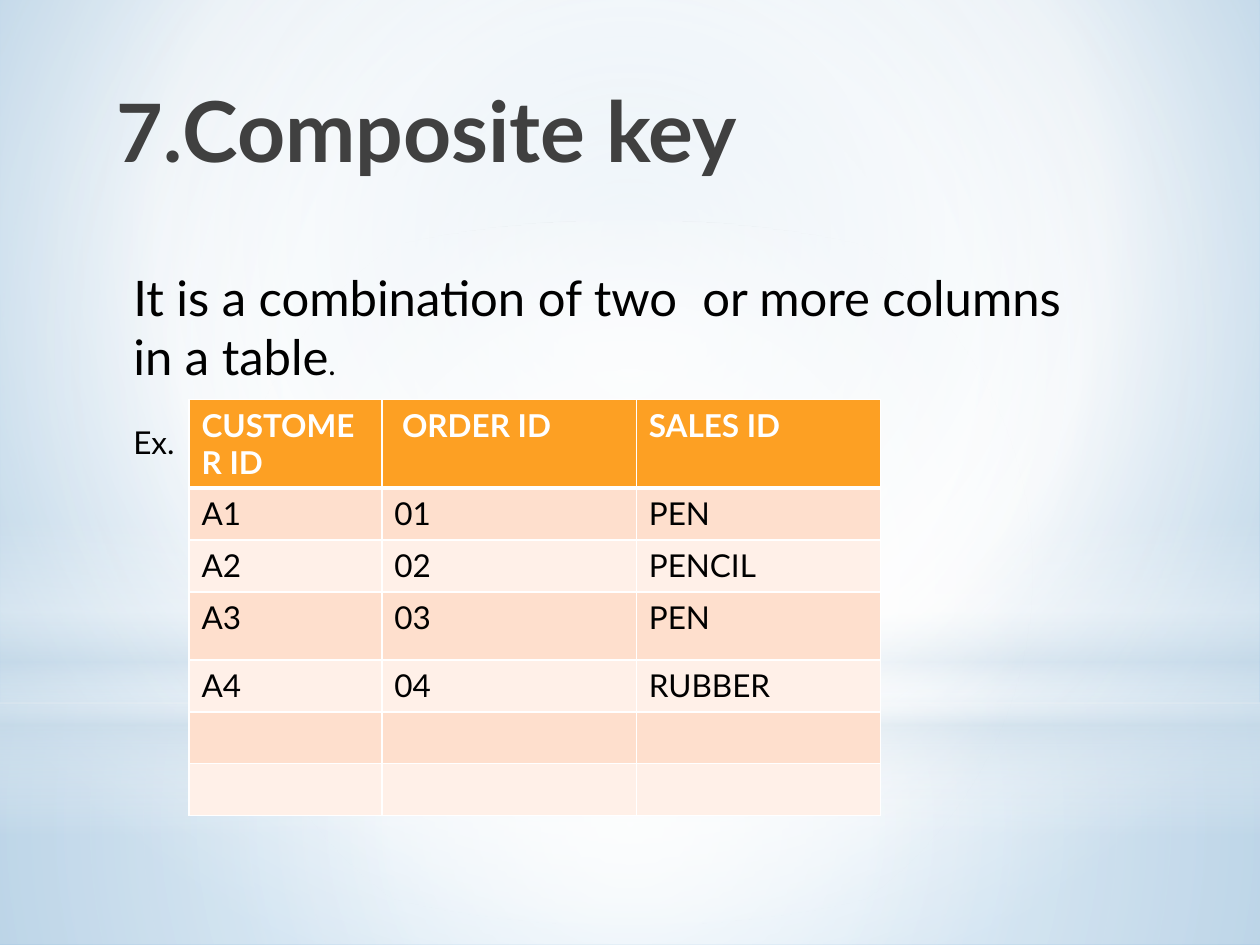
from lxml import etree
from pptx import Presentation
from pptx.dml.color import RGBColor
from pptx.enum.shapes import MSO_SHAPE
from pptx.enum.text import MSO_ANCHOR
from pptx.oxml import parse_xml
from pptx.oxml.ns import nsdecls
from pptx.util import Inches, Pt

RECTANGLE, OVAL = MSO_SHAPE.RECTANGLE, MSO_SHAPE.OVAL
TOP = MSO_ANCHOR.TOP
WIDTH, HEIGHT = Inches(10), Inches(7.5)
FONT = "Lato"
COLORS = {
    "white": "FFFFFF", "black": "000000", "title": "404040",
    "mist": "CCDDEA", "sky": "BCD5E8", "blue": "82B6DE",
    "header": "FDA023", "odd": "FEDFCD", "even": "FFF0E8",
}
CENTER = (50, 50, 50, 50)


def add_text(paragraph, text, size=18, color="black", bold=False):
    run = paragraph.add_run()
    run.text = text
    run.font.name = FONT
    run.font.size = Pt(size)
    run.font.bold = bold
    run.font.color.rgb = RGBColor.from_string(COLORS[color])


def set_gradient(fill, parent, stops, focus=None):
    """Stops are (position, color, opacity) in percent; no focus means top to bottom."""
    fill.gradient()
    stop_list = "".join(
        f'<a:gs pos="{position * 1000}"><a:srgbClr val="{COLORS[color]}">'
        f'<a:alpha val="{opacity * 1000}"/></a:srgbClr></a:gs>'
        for position, color, opacity in stops)
    if focus:
        sides = " ".join(f'{side}="{share * 1000}"' for side, share in zip("ltrb", focus))
        direction = f'<a:path path="circle"><a:fillToRect {sides}/></a:path>'
    else:
        direction = '<a:lin ang="5400000" scaled="0"/>'
    gradient = parse_xml(f'<a:gradFill {nsdecls("a")} rotWithShape="1">'
                         f'<a:gsLst>{stop_list}</a:gsLst>{direction}</a:gradFill>')
    parent.replace(parent.xpath("./a:gradFill")[0], gradient)


def set_borders(cell, top=1, bottom=1):
    properties = cell._tc.get_or_add_tcPr()
    for index, (side, width) in enumerate(zip("LRTB", (1, 1, top, bottom))):
        line = parse_xml(
            f'<a:ln{side} {nsdecls("a")} w="{Pt(width)}"><a:solidFill>'
            f'<a:srgbClr val="{COLORS["white"]}"/></a:solidFill></a:ln{side}>')
        properties.insert(index, line)


class SlideBuilder:
    """Places elements on a grid of 100 columns by 100 rows."""

    def __init__(self, slide):
        self.slide = slide

    def box(self, left, top, width, height):
        return (round(WIDTH * left / 100), round(HEIGHT * top / 100),
                round(WIDTH * width / 100), round(HEIGHT * height / 100))

    def background(self, stops, focus):
        fill = self.slide.background.fill
        fill.solid()
        properties = self.slide.element.xpath(".//p:bgPr")[0]
        set_gradient(fill, properties, stops, focus)

    def glow(self, kind, place, stops, focus=None):
        shape = self.slide.shapes.add_shape(kind, *self.box(*place))
        shape.shadow.inherit = False
        shape.line.fill.background()
        set_gradient(shape.fill, shape.element.spPr, stops, focus)

    def text_box(self, place):
        frame = self.slide.shapes.add_textbox(*self.box(*place)).text_frame
        frame.word_wrap = True
        frame.vertical_anchor = TOP
        return frame

    def table(self, place, columns, rows, records):
        table = self.slide.shapes.add_table(
            len(rows), len(columns), *self.box(*place)).table
        for column, width in zip(table.columns, columns):
            column.width = round(WIDTH * width / 100)
        for index, height in enumerate(rows):
            table.rows[index].height = round(HEIGHT * height / 100)
            is_header = index == 0
            fill = "header" if is_header else "odd" if index % 2 else "even"
            for column_index in range(len(columns)):
                cell = table.cell(index, column_index)
                cell.fill.solid()
                cell.fill.fore_color.rgb = RGBColor.from_string(COLORS[fill])
                set_borders(cell, top=3 if index == 1 else 1, bottom=3 if is_header else 1)
                if index < len(records):
                    add_text(cell.text_frame.paragraphs[0], records[index][column_index],
                             color="white" if is_header else "black", bold=is_header)


def main():
    presentation = Presentation()
    presentation.slide_width, presentation.slide_height = WIDTH, HEIGHT
    builder = SlideBuilder(presentation.slides.add_slide(presentation.slide_layouts[6]))

    # Backdrop with soft glows
    builder.background([(0, "sky", 100), (60, "white", 100), (100, "blue", 100)],
                       (20, 10, 20, 60))
    builder.glow(RECTANGLE, (0, 74.4, 100, 25.6),
                 [(0, "white", 91), (37, "white", 76), (100, "mist", 79)], CENTER)
    builder.glow(RECTANGLE, (0, 0, 100, 74.4),
                 [(0, "white", 89), (48, "white", 62), (100, "mist", 79)], CENTER)
    builder.glow(RECTANGLE, (0, 55, 100, 33.3),
                 [(0, "white", 0), (29, "white", 30), (45, "mist", 40),
                  (55, "white", 26), (65, "mist", 60), (100, "white", 0)])
    builder.glow(OVAL, (0, 23.4, 100, 74.4),
                 [(0, "white", 100), (56, "white", 0)], CENTER)

    # Title
    title = builder.text_box((8.3, 7.7, 64.2, 16.7)).paragraphs[0]
    add_text(title, "7.", size=46, color="title", bold=True)
    add_text(title, "Composite key", size=48, color="title", bold=True)

    # Example table, with two rows left empty
    builder.table((15, 42.3, 55, 44), (15.3, 20.2, 19.4),
                  (9.3, 5.5, 5.5, 7.2, 5.5, 5.5, 5.5),
                  [("CUSTOMER ID", " ORDER ID", "SALES ID"),
                   ("A1", "01", "PEN"),
                   ("A2", "02", "PENCIL"),
                   ("A3", "03", "PEN"),
                   ("A4", "04", "RUBBER")])

    # Definition and example label
    body = builder.text_box((9.6, 27.7, 78.8, 22))
    definition = body.paragraphs[0]
    add_text(definition, "It is a combination of two  or more columns in a table", size=28)
    add_text(definition, ".")
    example = body.add_paragraph()
    example.space_before = Pt(21.6)
    add_text(example, "Ex.")

    presentation.save("out.pptx")


if __name__ == "__main__":
    main()
